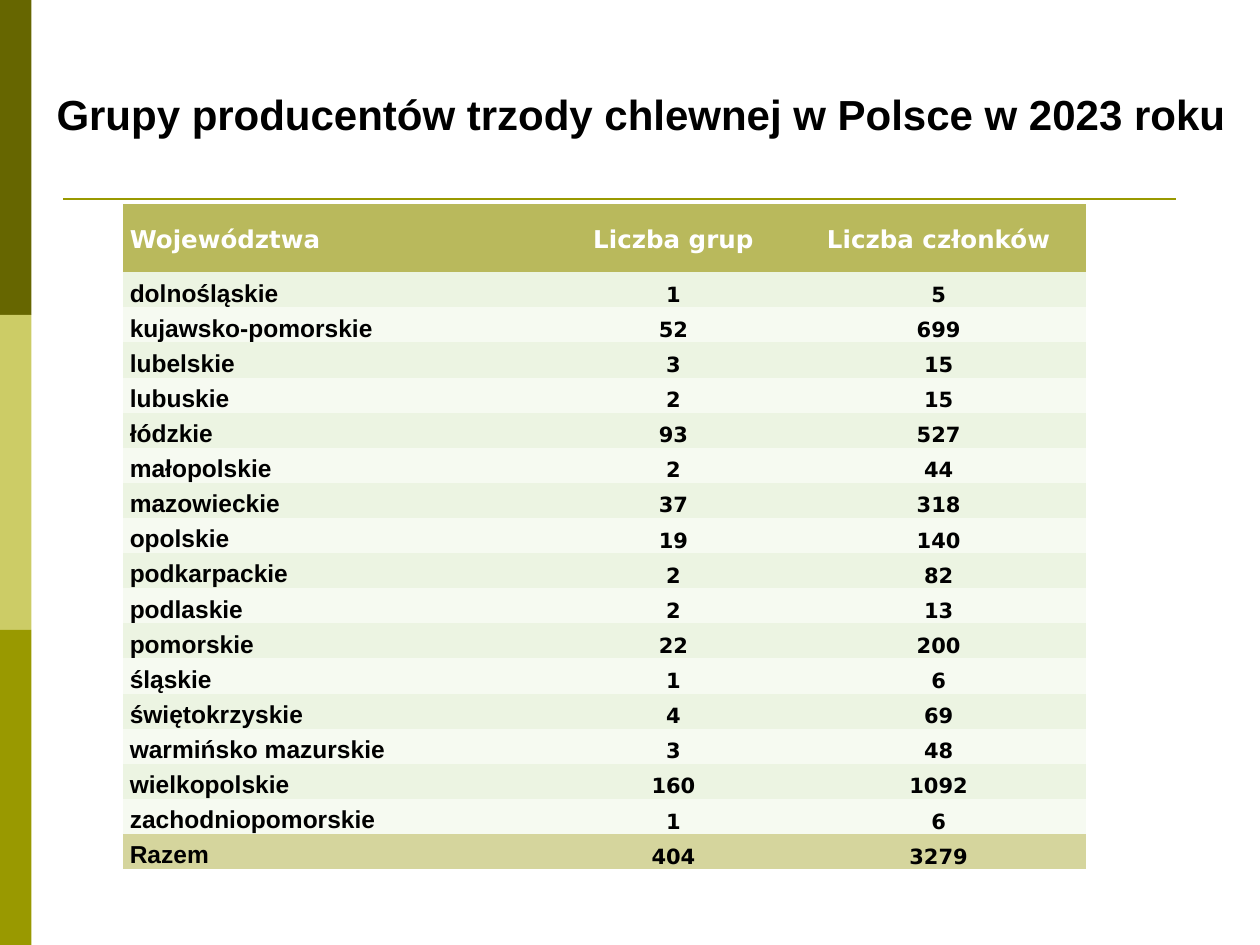
from typing import NamedTuple

from lxml.etree import SubElement
from pptx import Presentation
from pptx.dml.color import RGBColor
from pptx.enum.shapes import MSO_CONNECTOR as Link, MSO_SHAPE as Form
from pptx.enum.text import MSO_ANCHOR as Anchor, PP_ALIGN as Align
from pptx.oxml.ns import qn
from pptx.util import Inches, Pt

SANS, WIDE = "Arial", "DejaVu Sans"
BLACK, WHITE, OLIVE = "000000", "FFFFFF", "999900"
NO_STYLE = "{2D5ABB26-0587-4C30-8999-92F81FD0307C}"


class Font(NamedTuple):
    size: int
    face: str
    color: str = BLACK


class Band(NamedTuple):
    top: float
    color: str


class Row(NamedTuple):
    region: str
    groups: str
    members: str


TITLE = Font(24, SANS)
HEAD = Font(14, WIDE, WHITE)
NAME = Font(14, SANS)
COUNT = Font(12, WIDE)

BANDS = [Band(0, "666600"), Band(2.5, "CCCC66"), Band(5, OLIVE)]
WIDTHS = [3.43, 1.87, 2.34]
HEIGHT, HEAD_ROW = 5.28, 0.54
ROWS = [
    Row("Województwa", "Liczba grup", "Liczba członków"),
    Row("dolnośląskie", "1", "5"),
    Row("kujawsko-pomorskie", "52", "699"),
    Row("lubelskie", "3", "15"),
    Row("lubuskie", "2", "15"),
    Row("łódzkie", "93", "527"),
    Row("małopolskie", "2", "44"),
    Row("mazowieckie", "37", "318"),
    Row("opolskie", "19", "140"),
    Row("podkarpackie", "2", "82"),
    Row("podlaskie", "2", "13"),
    Row("pomorskie", "22", "200"),
    Row("śląskie", "1", "6"),
    Row("świętokrzyskie", "4", "69"),
    Row("warmińsko mazurskie", "3", "48"),
    Row("wielkopolskie", "160", "1092"),
    Row("zachodniopomorskie", "1", "6"),
    Row("Razem", "404", "3279"),
]
LAST = len(ROWS) - 1


def paint(fill, color: str) -> None:
    fill.solid()
    fill.fore_color.rgb = RGBColor.from_string(color)


def write(par, text: str, font: Font) -> None:
    run = par.add_run()
    run.text = text
    run.font.size = Pt(font.size)
    run.font.name = font.face
    run.font.bold = True
    paint(run.font.fill, font.color)


def draw_band(slide, band: Band) -> None:
    shape = slide.shapes.add_shape(
        Form.RECTANGLE, 0, Inches(band.top), Inches(0.25), Inches(2.5))
    shape.shadow.inherit = False
    shape.line.fill.background()
    paint(shape.fill, band.color)


def draw_rule(slide) -> None:
    rule = slide.shapes.add_connector(
        Link.STRAIGHT, Inches(0.5), Inches(1.58), Inches(9.33), Inches(1.58))
    paint(rule.line.fill, OLIVE)
    rule.line.width = Pt(1.5)
    SubElement(rule._element.spPr, qn("a:effectLst"))


def draw_title(slide, text: str) -> None:
    box = slide.shapes.add_textbox(
        Inches(0.35), Inches(0.3), Inches(9.61), Inches(0.85))
    frame = box.text_frame
    frame.word_wrap = True
    frame.vertical_anchor = Anchor.BOTTOM
    write(frame.paragraphs[0], text, TITLE)


def row_fill(row: int) -> str:
    if row == 0:
        return "B9B95C"
    if row == LAST:
        return "D5D59D"
    return "ECF4E2" if row % 2 else "F6FAF1"


def fill_cell(cell, text: str, row: int, col: int) -> None:
    paint(cell.fill, row_fill(row))
    cell.margin_left = cell.margin_right = Inches(0.05)
    cell.margin_top = cell.margin_bottom = 0
    cell.vertical_anchor = Anchor.BOTTOM if row else Anchor.MIDDLE
    par = cell.text_frame.paragraphs[0]
    par.line_spacing = 1.15
    par.alignment = Align.CENTER if col else Align.LEFT
    body = COUNT if col else NAME
    write(par, text, body if row else HEAD)


def draw_table(slide) -> None:
    table = slide.shapes.add_table(
        len(ROWS), len(WIDTHS), Inches(0.98), Inches(1.62),
        Inches(sum(WIDTHS)), Inches(HEIGHT)).table
    table._tbl.tblPr.find(qn("a:tableStyleId")).text = NO_STYLE
    table.horz_banding = False
    for col, width in enumerate(WIDTHS):
        table.columns[col].width = Inches(width)
    for row, texts in enumerate(ROWS):
        tall = (HEIGHT - HEAD_ROW) / LAST if row else HEAD_ROW
        table.rows[row].height = Inches(tall)
        for col, text in enumerate(texts):
            fill_cell(table.cell(row, col), text, row, col)


def main() -> None:
    """Build the slide on pig producer groups in Poland."""
    deck = Presentation()
    deck.slide_width, deck.slide_height = Inches(10), Inches(7.5)
    slide = deck.slides.add_slide(deck.slide_layouts[6])
    for band in BANDS:
        draw_band(slide, band)
    draw_rule(slide)
    draw_title(slide, "Grupy producentów trzody chlewnej w Polsce w 2023 roku")
    draw_table(slide)
    deck.save("out.pptx")


if __name__ == "__main__":
    main()
